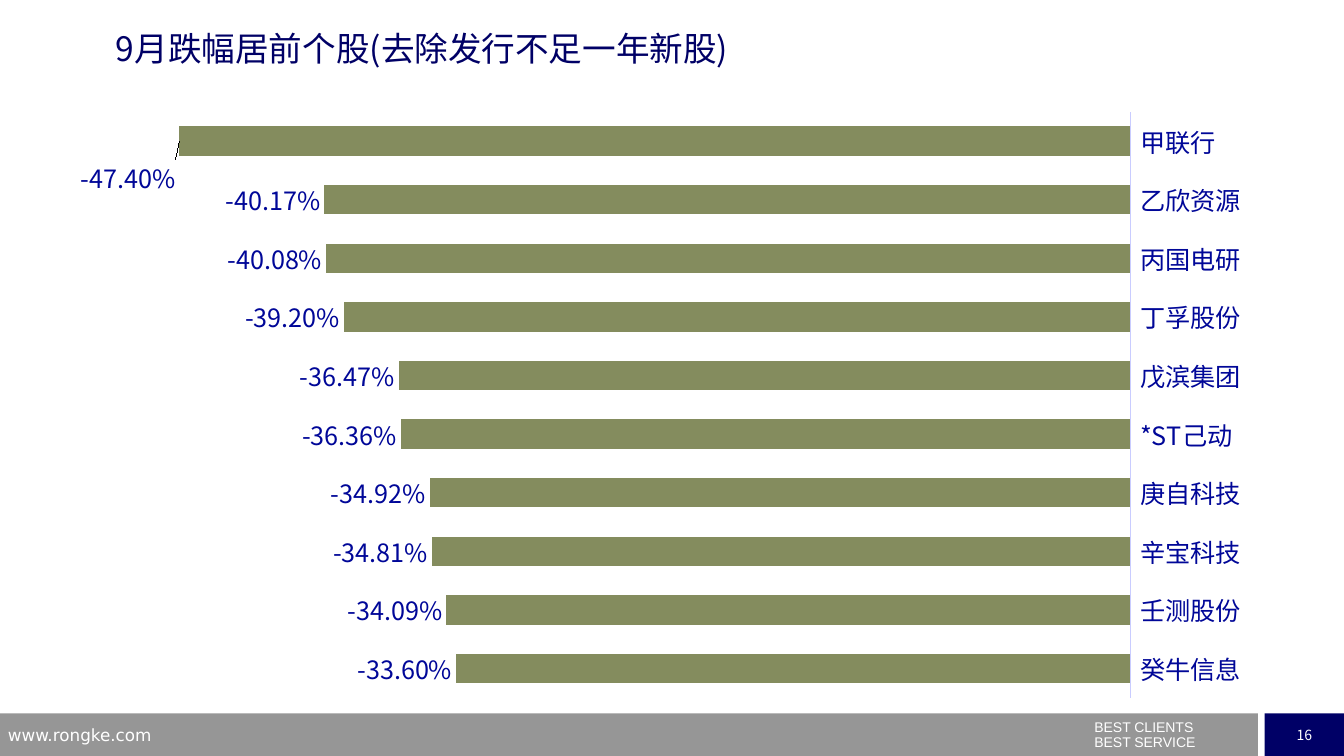
import pptx
import pptx.chart.data
import pptx.dml.color
import pptx.enum.chart
import pptx.enum.shapes
import pptx.enum.text
import pptx.oxml
import pptx.oxml.ns
import pptx.util

Cm, Pt = pptx.util.Cm, pptx.util.Pt

TITLE = "9月跌幅居前个股(去除发行不足一年新股)"
WEBSITE = "www.rongke.com"
MOTTO = ["BEST CLIENTS", "BEST SERVICE"]
PAGE = "16"
FALLS = [
    ("甲联行", -0.4740),
    ("乙欣资源", -0.4017),
    ("丙国电研", -0.4008),
    ("丁孚股份", -0.3920),
    ("戊滨集团", -0.3647),
    ("*ST己动", -0.3636),
    ("庚自科技", -0.3492),
    ("辛宝科技", -0.3481),
    ("壬测股份", -0.3409),
    ("癸牛信息", -0.3360),
]
COLORS = {"navy": "000066", "grey": "969696", "white": "FFFFFF",
          "label": "000798", "bar": "848C5E", "axis": "C9CCFF"}
CJK = "Noto Sans CJK SC"
PLOT = {"x": 0.039, "y": 0.02, "w": 0.849, "h": 0.961}
FOOTER_TOP, FOOTER_HEIGHT = 17.98, 1.07


def rgb(name):
    return pptx.dml.color.RGBColor.from_string(COLORS[name])


def set_font(font, size, color, face=CJK):
    """Set size, colour and typeface, for Latin and East Asian text alike."""
    font.size = Pt(size)
    font.color.rgb = rgb(color)
    font.name = face
    latin = font._element.find(pptx.oxml.ns.qn("a:latin"))
    latin.addnext(pptx.oxml.parse_xml(
        f'<a:ea {pptx.oxml.ns.nsdecls("a")} typeface="{face}"/>'))


def add_lines(tf, lines, size, color, face=CJK, align=None, spacing=None):
    for i, line in enumerate(lines):
        p = tf.paragraphs[0] if i == 0 else tf.add_paragraph()
        p.alignment = align
        p.line_spacing = spacing
        r = p.add_run()
        r.text = line
        set_font(r.font, size, color, face)


def add_text(slide, box, lines, size, color, face=CJK, spacing=None):
    tf = slide.shapes.add_textbox(*map(Cm, box)).text_frame
    tf.word_wrap = True
    add_lines(tf, lines, size, color, face, spacing=spacing)
    return tf


def add_footer_block(slide, left, width, color):
    sp = slide.shapes.add_shape(
        pptx.enum.shapes.MSO_SHAPE.RECTANGLE,
        Cm(left), Cm(FOOTER_TOP), Cm(width), Cm(FOOTER_HEIGHT))
    sp.shadow.inherit = False
    sp.fill.solid()
    sp.fill.fore_color.rgb = rgb(color)
    sp.line.fill.background()
    return sp


def layout_xml(**values):
    """Manual chart layout; w and h make it an inner plot area in edge mode."""
    parts = ""
    if "w" in values:
        parts = ('<c:layoutTarget val="inner"/><c:xMode val="edge"/>'
                 '<c:yMode val="edge"/>')
    parts += "".join(f'<c:{k} val="{v}"/>' for k, v in values.items())
    return pptx.oxml.parse_xml(
        f'<c:layout {pptx.oxml.ns.nsdecls("c")}>'
        f'<c:manualLayout>{parts}</c:manualLayout></c:layout>')


def add_falls_chart(slide):
    data = pptx.chart.data.CategoryChartData(number_format="0.00%")
    bottom_up = FALLS[::-1]
    data.categories = [name for name, _ in bottom_up]
    data.add_series("跌幅", [fall for _, fall in bottom_up])
    chart = slide.shapes.add_chart(
        pptx.enum.chart.XL_CHART_TYPE.BAR_CLUSTERED,
        Cm(2.03), Cm(2.51), Cm(29.79), Cm(15.37), data).chart
    chart.has_legend = False
    chart.has_title = False
    set_font(chart.font, 18, "label")

    area = chart._chartSpace.chart.plotArea
    for old in area.findall(pptx.oxml.ns.qn("c:layout")):
        area.remove(old)
    area.insert(0, layout_xml(**PLOT))

    values = chart.value_axis
    values.minimum_scale, values.maximum_scale = -0.5, 0
    values.has_major_gridlines = False
    values.visible = False

    names = chart.category_axis
    names.major_tick_mark = pptx.enum.chart.XL_TICK_MARK.NONE
    names.tick_label_position = pptx.enum.chart.XL_TICK_LABEL_POSITION.HIGH
    names.format.line.color.rgb = rgb("axis")
    names.format.line.width = Pt(0.75)
    set_font(names.tick_labels.font, 18, "label")

    plot = chart.plots[0]
    plot.gap_width = 100
    plot.vary_by_categories = False
    series = plot.series[0]
    series.invert_if_negative = False
    series.format.fill.solid()
    series.format.fill.fore_color.rgb = rgb("bar")

    outside = pptx.enum.chart.XL_LABEL_POSITION.OUTSIDE_END
    labels = series.data_labels
    labels.show_value = True
    labels.number_format = "0.00%"
    labels.number_format_is_linked = False
    labels.position = outside
    set_font(labels.font, 18, "label")

    top = len(FALLS) - 1
    top_label = series.points[top].data_label
    set_font(top_label.font, 18, "label")
    top_label.position = outside
    idx = labels._element.find(
        f'{pptx.oxml.ns.qn("c:dLbl")}/{pptx.oxml.ns.qn("c:idx")}')
    idx.addnext(layout_xml(x=0, y=0.06))


def main():
    prs = pptx.Presentation()
    prs.slide_width, prs.slide_height = Cm(33.87), Cm(19.05)
    slide = prs.slides.add_slide(prs.slide_layouts[6])

    add_footer_block(slide, 0, 31.7, "grey")
    page = add_footer_block(slide, 31.87, 2, "navy").text_frame
    page.word_wrap = False
    page.vertical_anchor = pptx.enum.text.MSO_ANCHOR.MIDDLE
    add_lines(page, [PAGE], 10, "white",
              align=pptx.enum.text.PP_ALIGN.CENTER)

    motto = add_text(slide, (27.33, 18.14, 6.5, 0.91), MOTTO, 10, "white",
                     "Arial", Pt(11))
    motto.margin_top = 0
    add_text(slide, (-0.05, 18.14, 8.18, 0.66), [WEBSITE], 12, "white",
             "DejaVu Sans")
    title = add_text(slide, (2.92, 0.71, 22.86, 1.47), [TITLE], 24, "navy")
    title.margin_left = title.margin_right = 0
    title.margin_top = title.margin_bottom = 0

    add_falls_chart(slide)
    prs.save("out.pptx")


if __name__ == "__main__":
    main()
